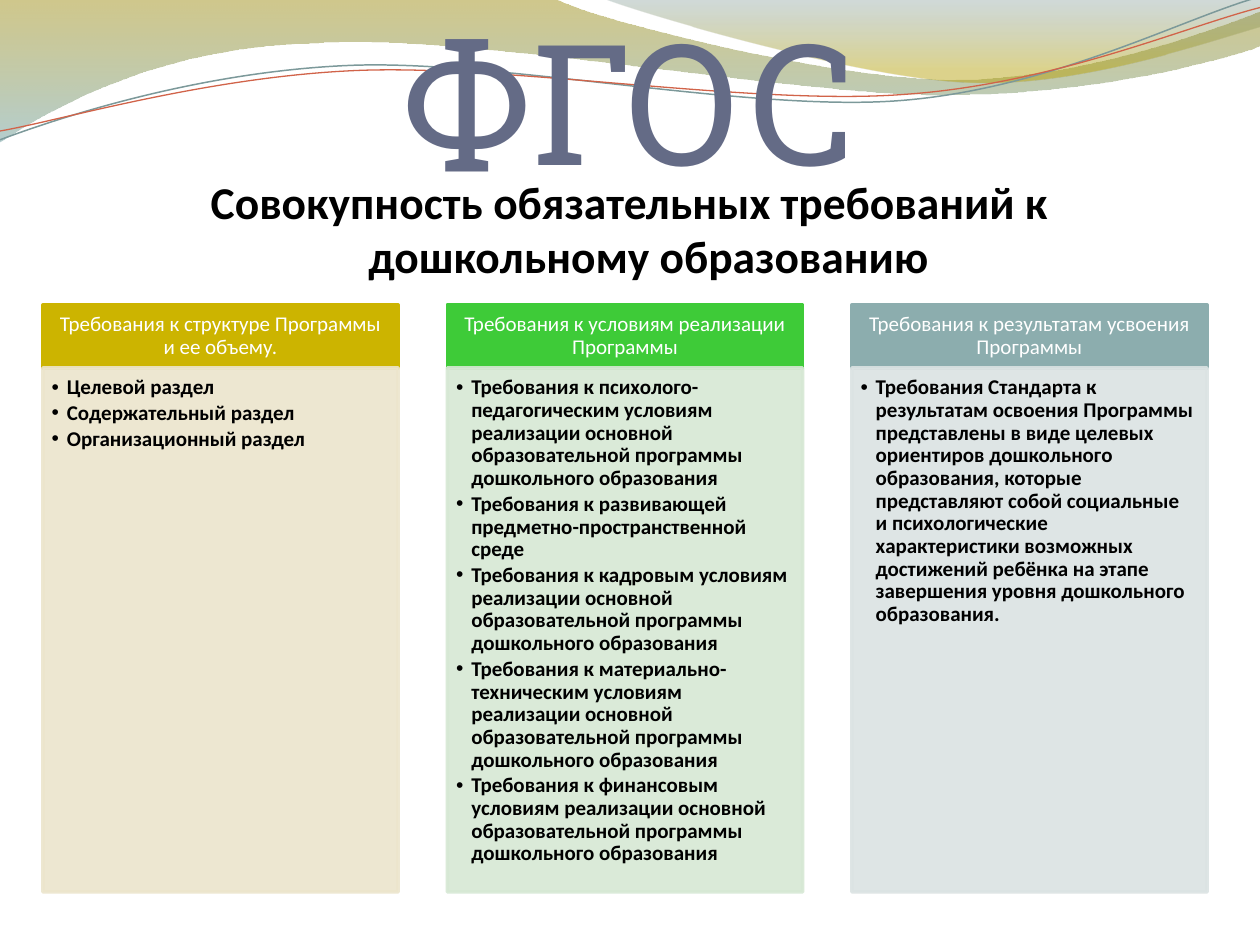
from lxml import etree
from pptx import Presentation
from pptx import util as u
from pptx.dml.color import RGBColor
from pptx.enum import shapes, text
from pptx.oxml.ns import qn

COLORS = {
    "olive": "978500", "teal": "77A5A6", "slate": "648484", "gold": "B49F00",
    "grey_line": "7C999A", "red_line": "D16349",
    "title": "646B86", "black": "000000", "white": "FFFFFF",
    "yellow": "CCB400", "yellow_pale": "ECE5CC",
    "green": "3ECB38", "green_pale": "D6E8D4",
    "blue": "8CADAE", "blue_pale": "DBE3E3",
}
COLORS = {name: RGBColor.from_string(value) for name, value in COLORS.items()}

deck = Presentation()
deck.slide_width, deck.slide_height = u.Inches(10), u.Inches(7.5)
page = deck.slides.add_slide(deck.slide_layouts[6])


def write_text(box, lines, size, color, font="Calibri", bold=False, centred=True,
               anchor=text.MSO_ANCHOR.TOP, insets=(0.1, 0.05, 0.1, 0.05),
               spacing=1.0, before=0, after=0, indent=0, bullet=None):
    frame = box.text_frame
    frame.word_wrap = True
    frame.vertical_anchor = anchor
    (frame.margin_left, frame.margin_top,
     frame.margin_right, frame.margin_bottom) = map(u.Inches, insets)
    for number, line in enumerate(lines):
        para = frame.add_paragraph() if number else frame.paragraphs[0]
        para.alignment = text.PP_ALIGN.CENTER if centred else text.PP_ALIGN.LEFT
        para.line_spacing = spacing
        para.space_before, para.space_after = u.Pt(before), u.Pt(after)
        props = para._p.get_or_add_pPr()
        props.set("marL", str(u.Inches(indent)))
        props.set("indent", str(-u.Inches(indent)))
        if bullet:
            etree.SubElement(props, qn("a:buFont")).set("typeface", "Arial")
            etree.SubElement(props, qn("a:buChar")).set("char", bullet)
        span = para.add_run()
        span.text = line
        span.font.name, span.font.size, span.font.bold = font, u.Pt(size), bold
        span.font.color.rgb = COLORS[color]


def set_opacity(shape, percents):
    for color, percent in zip(shape._element.spPr.iter(qn("a:srgbClr")), percents):
        etree.SubElement(color, qn("a:alpha")).set("val", str(percent * 1000))


# Waves: start point, then straight (2 numbers) or Bezier (6 numbers) segments
waves = [
    {"start": (0, 0), "stops": ("olive", "teal"), "end": 1, "opacity": (45, 55),
     "segments": [(4.4, -0.01), (4.76, 0.17, 6.64, 0.63, 7.58, 0.63),
                  (8.53, 0.63, 9.58, 0.26, 10, 0.09), (10.01, 0.36),
                  (9.83, 0.44, 8.7, 0.76, 7.46, 0.75),
                  (6.22, 0.75, 3.82, 0.28, 2.57, 0.34),
                  (1.29, 0.36, 0.46, 0.83, -0.01, 1.13), (0, 0)]},
    {"start": (4.79, -0.01), "stops": ("slate", "gold"), "end": 0.8, "opacity": (30, 45),
     "segments": [(5.09, 0.11, 6.82, 0.62, 7.69, 0.65),
                  (8.56, 0.69, 9.61, 0.32, 10, 0.21), (10, 0), (4.79, -0.01)]},
    {"start": (0, 1.11), "line": "grey_line", "width": 0.85,
     "segments": [(0.48, 0.93, 1.58, 0.57, 2.77, 0.52),
                  (3.95, 0.47, 5.93, 0.89, 7.13, 0.8),
                  (8.33, 0.71, 9.38, 0.15, 9.98, -0.02)]},
    {"start": (0, 1.04), "line": "red_line", "width": 0.75,
     "segments": [(0.47, 0.96, 1.64, 0.61, 2.83, 0.56),
                  (4.03, 0.51, 5.97, 0.84, 7.17, 0.75),
                  (8.36, 0.67, 9.41, 0.21, 10, 0.06)]},
]
for wave in waves:
    corners = [(u.Inches(x), u.Inches(y)) for segment in wave["segments"]
               for x, y in zip(segment[::2], segment[1::2])]
    builder = page.shapes.build_freeform(*map(u.Inches, wave["start"]))
    builder.add_line_segments(corners, close="stops" in wave)
    ribbon = builder.convert_to_shape()
    ribbon.shadow.inherit = False

    # Join each three control points into one Bezier segment
    steps = iter(list(ribbon._element.spPr.iter(qn("a:lnTo"))))
    for segment in wave["segments"]:
        first = next(steps)
        if len(segment) == 6:
            first.addprevious(curve := etree.Element(qn("a:cubicBezTo")))
            for step in (first, next(steps), next(steps)):
                curve.append(step[0])
                step.getparent().remove(step)

    if "stops" in wave:
        ribbon.line.fill.background()
        ribbon.fill.gradient()
        ribbon.fill.gradient_angle = 270
        for stop, name, position in zip(ribbon.fill.gradient_stops, wave["stops"],
                                        (0, wave["end"])):
            stop.color.rgb = COLORS[name]
            stop.position = position
        set_opacity(ribbon, wave["opacity"])
    else:
        ribbon.fill.background()
        ribbon.line.color.rgb = COLORS[wave["line"]]
        ribbon.line.width = u.Pt(wave["width"])

# Title and subtitle
title = page.shapes.add_textbox(*map(u.Inches, (0.5, 0.33, 9, 1.25)))
write_text(title, ["ФГОС"], 96, "title", font="Roboto Slab",
           anchor=text.MSO_ANCHOR.BOTTOM, insets=(0, 0.05, 0, 0))
subtitle = page.shapes.add_textbox(*map(u.Inches, (0.5, 1.33, 9, 5.58)))
write_text(subtitle, ["Совокупность обязательных требований к дошкольному образованию"],
           26, "black", bold=True, before=5.2, indent=0.3)

# Three columns: heading above a pale panel with bullets
program = "реализации основной образовательной программы дошкольного образования"
columns = [
    ("yellow", "Требования к структуре Программы и ее объему.",
     ["Целевой раздел", "Содержательный раздел", "Организационный раздел"]),
    ("green", "Требования к условиям реализации Программы",
     [f"Требования к психолого-педагогическим условиям {program}",
      "Требования к развивающей предметно-пространственной среде",
      f"Требования к кадровым условиям {program}",
      f"Требования к материально-техническим условиям {program}",
      f"Требования к финансовым условиям {program}"]),
    ("blue", "Требования к результатам усвоения Программы",
     ["Требования Стандарта к результатам освоения Программы представлены в виде "
      "целевых ориентиров дошкольного образования, которые представляют собой "
      "социальные и психологические характеристики возможных достижений ребёнка "
      "на этапе завершения уровня дошкольного образования."]),
]
for index, (color, heading, items) in enumerate(columns):
    left = 0.34 + 3.21 * index
    boxes = []
    for top, height, paint in ((2.42, 0.5, color), (2.92, 4.16, color + "_pale")):
        box = page.shapes.add_shape(shapes.MSO_SHAPE.RECTANGLE,
                                    *map(u.Inches, (left, top, 2.82, height)))
        box.shadow.inherit = False
        box.fill.solid()
        box.fill.fore_color.rgb = box.line.color.rgb = COLORS[paint]
        box.line.width = u.Pt(2)
        boxes.append(box)
    header, panel = boxes
    set_opacity(panel, (90, 90))
    write_text(header, [heading], 12, "white", anchor=text.MSO_ANCHOR.MIDDLE,
               insets=(0.09, 0.05, 0.09, 0.05), spacing=0.9, after=4.2)
    write_text(panel, items, 12, "black", bold=True, centred=False,
               insets=(0.07, 0.07, 0.09, 0.1), spacing=0.9, after=1.8,
               indent=0.12, bullet="•")

deck.save("out.pptx")
